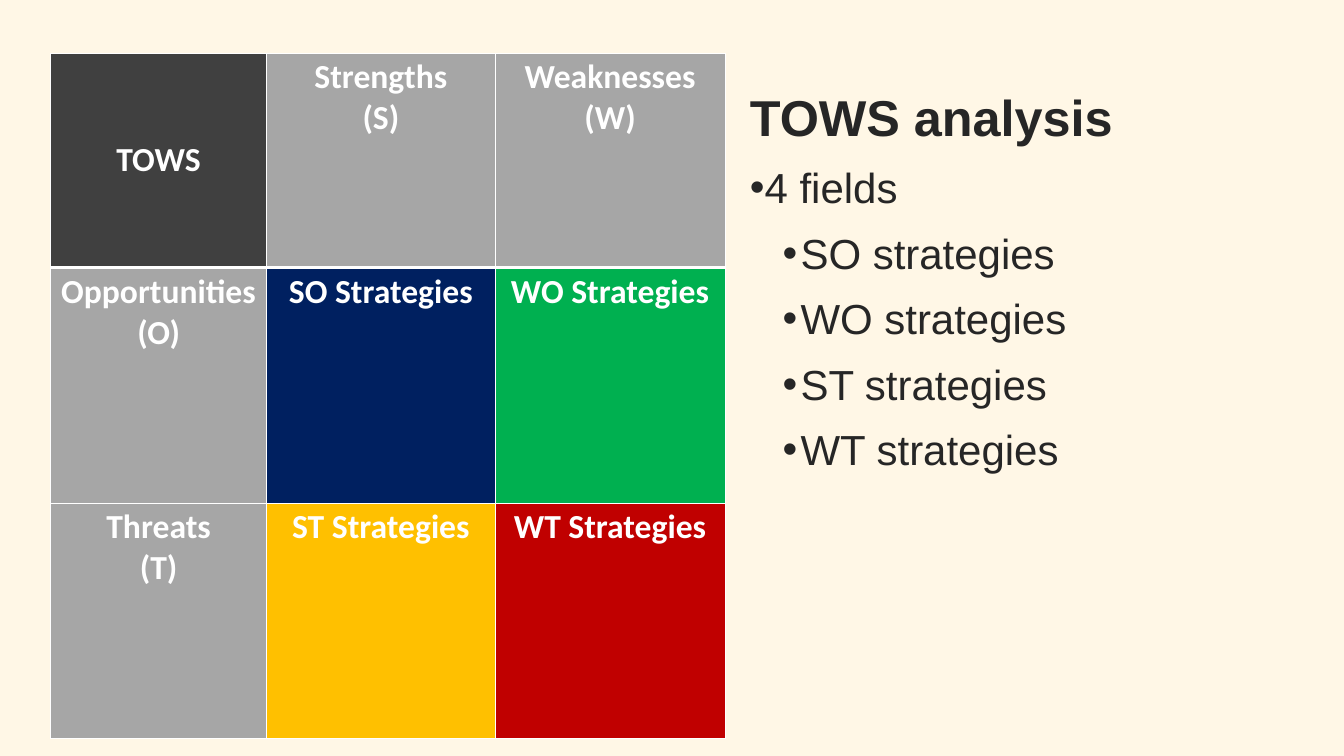
from dataclasses import dataclass

from lxml.etree import SubElement
from pptx import Presentation
from pptx.dml.color import RGBColor as Color
from pptx.enum.text import MSO_ANCHOR as Anchor, PP_ALIGN as Align
from pptx.oxml.ns import qn
from pptx.util import Cm, Pt


@dataclass(frozen=True)
class Theme:
    background: str = "FFF7E6"
    text: str = "262626"
    white: str = "FFFFFF"
    corner: str = "404040"
    factor: str = "A6A6A6"
    strength_opportunity: str = "002060"
    weakness_opportunity: str = "00B050"
    strength_threat: str = "FFC000"
    weakness_threat: str = "C00000"
    title_size: int = 48
    body_size: int = 40
    table_size: int = 32
    thin_line: int = 1
    thick_line: int = 3
    body_font: str = "Arial"
    table_font: str = "Calibri"


THEME = Theme()

MATRIX = [
    [("TOWS", THEME.corner), ("Strengths\n(S)", THEME.factor),
     ("Weaknesses (W)", THEME.factor)],
    [("Opportunities (O)", THEME.factor), ("SO Strategies", THEME.strength_opportunity),
     ("WO Strategies", THEME.weakness_opportunity)],
    [("Threats\n(T)", THEME.factor), ("ST Strategies", THEME.strength_threat),
     ("WT Strategies", THEME.weakness_threat)],
]
COLUMN_WIDTHS = [7.26, 7.68, 7.72]
ROW_HEIGHTS = [7.2, 7.92, 7.92]

TITLE = "TOWS analysis"
BULLETS = [
    (0, "4 fields"),
    (1, "SO strategies"),
    (1, "WO strategies"),
    (1, "ST strategies"),
    (1, "WT strategies"),
]
# Left margin and first-line indent in cm for each bullet level
INDENTS = [(0, 0), (1.7, -0.6)]


def format_runs(paragraph, font_name, size, color, bold):
    for run in paragraph.runs:
        run.font.name = font_name
        run.font.size = Pt(size)
        run.font.bold = bold
        run.font.color.rgb = Color.from_string(color)


def add_bullet(paragraph, level):
    paragraph.level = level
    left, first_line = INDENTS[level]
    properties = paragraph._p.get_or_add_pPr()
    properties.set("marL", str(Cm(left)))
    properties.set("indent", str(Cm(first_line)))
    SubElement(properties, qn("a:buFont"), typeface=THEME.body_font)
    SubElement(properties, qn("a:buChar"), char="•")


def add_borders(cell, row_index):
    """Draw white cell borders, with a thick rule below the header row."""
    top = THEME.thick_line if row_index == 1 else THEME.thin_line
    bottom = THEME.thick_line if row_index == 0 else THEME.thin_line
    widths = {"lnL": THEME.thin_line, "lnR": THEME.thin_line, "lnT": top, "lnB": bottom}
    properties = cell._tc.get_or_add_tcPr()
    for side, width in widths.items():
        line = SubElement(properties, qn(f"a:{side}"), w=str(Pt(width)))
        fill = SubElement(line, qn("a:solidFill"))
        SubElement(fill, qn("a:srgbClr"), val=THEME.white)


def add_matrix(slide):
    frame = slide.shapes.add_table(
        len(ROW_HEIGHTS), len(COLUMN_WIDTHS), Cm(1.7), Cm(1.78),
        Cm(sum(COLUMN_WIDTHS)), Cm(sum(ROW_HEIGHTS)))
    table = frame.table
    for column, width in zip(table.columns, COLUMN_WIDTHS):
        column.width = Cm(width)
    for row, height in zip(table.rows, ROW_HEIGHTS):
        row.height = Cm(height)

    for row_index, entries in enumerate(MATRIX):
        for column_index, (text, color) in enumerate(entries):
            cell = table.cell(row_index, column_index)
            add_borders(cell, row_index)
            cell.fill.solid()
            cell.fill.fore_color.rgb = Color.from_string(color)
            cell.text_frame.text = text
            for paragraph in cell.text_frame.paragraphs:
                paragraph.alignment = Align.CENTER
                format_runs(paragraph, THEME.table_font, THEME.table_size, THEME.white, True)
    table.cell(0, 0).vertical_anchor = Anchor.MIDDLE


def add_summary(slide):
    box = slide.shapes.add_textbox(Cm(24.87), Cm(2.62), Cm(20.29), Cm(13.08))
    text_frame = box.text_frame
    text_frame.word_wrap = True
    text_frame.margin_left = text_frame.margin_right = Cm(0.33)
    text_frame.margin_top = text_frame.margin_bottom = Cm(0.18)

    text_frame.text = TITLE
    title = text_frame.paragraphs[0]
    title.line_spacing = 1.05
    format_runs(title, THEME.body_font, THEME.title_size, THEME.text, True)

    for level, text in BULLETS:
        paragraph = text_frame.add_paragraph()
        paragraph.text = text
        add_bullet(paragraph, level)
        paragraph.line_spacing = 1.05
        paragraph.space_before = Pt(12)
        format_runs(paragraph, THEME.body_font, THEME.body_size, THEME.text, False)


def main():
    presentation = Presentation()
    presentation.slide_width = Cm(45.16)
    presentation.slide_height = Cm(25.4)
    slide = presentation.slides.add_slide(presentation.slide_layouts[6])
    slide.background.fill.solid()
    slide.background.fill.fore_color.rgb = Color.from_string(THEME.background)
    add_summary(slide)
    add_matrix(slide)
    presentation.save("out.pptx")


if __name__ == "__main__":
    main()
